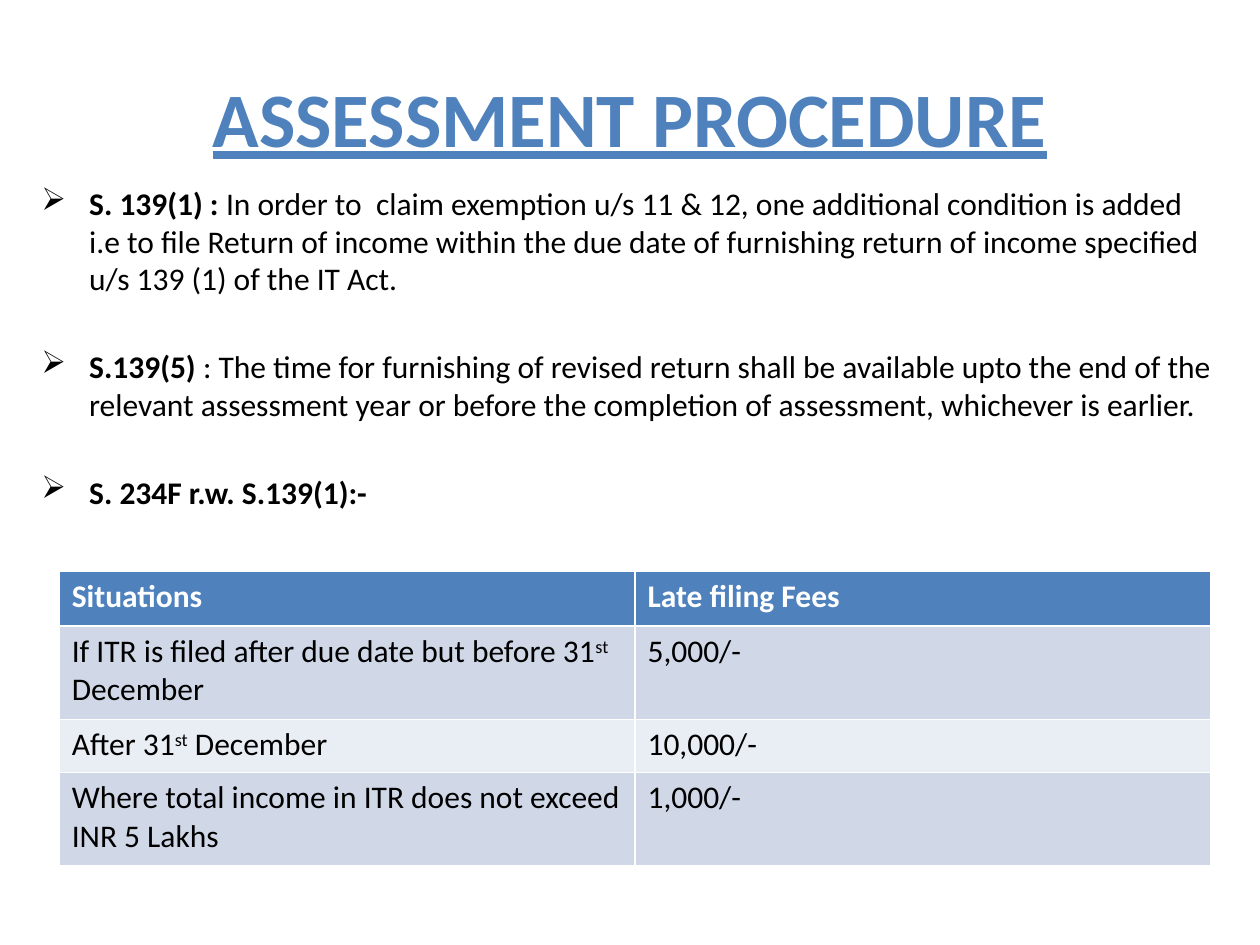
from dataclasses import dataclass

from lxml.etree import SubElement
from pptx import Presentation
from pptx.dml.color import RGBColor as Rgb
from pptx.enum.text import MSO_ANCHOR as Anchor, PP_ALIGN as Align
from pptx.oxml.ns import qn
from pptx.util import Inches, Pt

BLUE, WHITE, BLACK = "4F81BD", "FFFFFF", "000000"
BANDS = ("D0D8E8", "E9EDF4")


@dataclass
class Part:
    text: str
    bold: bool = False
    sup: bool = False


@dataclass
class Row:
    case: list[Part]
    fee: str
    height: float


POINTS = [
    [
        Part("S. 139(1) :", True),
        Part(
            " In order to  claim exemption u/s 11 & 12, one additional condition "
            "is added  i.e to file Return of income within the due date of "
            "furnishing return of income specified u/s 139 (1) of the IT Act."
        ),
    ],
    [
        Part("S.139(5) ", True),
        Part(
            ": The time for furnishing of revised return shall be available upto "
            "the end of the relevant assessment year or before the completion of "
            "assessment, whichever is earlier."
        ),
    ],
    [Part("S. 234F r.w. S.139(1):-", True)],
]

ROWS = [
    Row([Part("Situations")], "Late filing Fees", 0.44),
    Row(
        [
            Part("If ITR is filed after due date but before 31"),
            Part("st", sup=True),
            Part(" December"),
        ],
        "5,000/-",
        0.74,
    ),
    Row([Part("After 31"), Part("st", sup=True), Part(" December")], "10,000/-", 0.42),
    Row([Part("Where total income in ITR does not exceed INR 5 Lakhs")], "1,000/-", 0.74),
]


def paint(item, tone: str) -> None:
    item.rgb = Rgb.from_string(tone)


def write(para, parts: list[Part], tone: str = BLACK, **extra) -> None:
    for part in parts:
        run = para.add_run()
        run.text = part.text
        look = {"name": "Calibri", "size": Pt(18), "bold": part.bold} | extra
        for key, value in look.items():
            setattr(run.font, key, value)
        paint(run.font.color, tone)
        if part.sup:
            run._r.get_or_add_rPr().set("baseline", "30000")


def add_box(slide, left: float, top: float, width: float, height: float):
    box = slide.shapes.add_textbox(*map(Inches, (left, top, width, height)))
    box.text_frame.word_wrap = True
    return box.text_frame


def add_title(slide) -> None:
    frame = add_box(slide, 0.5, 0.3, 9, 1.25)
    frame.vertical_anchor = Anchor.MIDDLE
    para = frame.paragraphs[0]
    para.alignment = Align.CENTER
    write(para, [Part("ASSESSMENT PROCEDURE", True)], BLUE, size=Pt(44), underline=True)


def add_points(slide) -> None:
    frame = add_box(slide, 0.23, 1.41, 9.53, 5.78)
    for i, parts in enumerate(POINTS):
        para = frame.add_paragraph() if i else frame.paragraphs[0]
        if i:
            para.space_before = Pt(28.5)
        props = para._p.get_or_add_pPr()
        props.set("marL", str(Inches(0.38)))
        props.set("indent", str(Inches(-0.38)))
        SubElement(props, qn("a:buChar")).set("char", "➢")
        write(para, parts)


def add_fees(slide) -> None:
    height = sum(row.height for row in ROWS)
    place = map(Inches, (0.47, 4.53, 9.14, height))
    table = slide.shapes.add_table(len(ROWS), 2, *place).table
    for i, row in enumerate(ROWS):
        table.rows[i].height = Inches(row.height)
        head = i == 0
        fill = BLUE if head else BANDS[(i - 1) % 2]
        for j, parts in enumerate((row.case, [Part(row.fee)])):
            cell = table.cell(i, j)
            cell.fill.solid()
            paint(cell.fill.fore_color, fill)
            write(cell.text_frame.paragraphs[0], parts, WHITE if head else BLACK, bold=head)


def main() -> None:
    deck = Presentation()
    deck.slide_width, deck.slide_height = Inches(10), Inches(7.5)
    slide = deck.slides.add_slide(deck.slide_layouts[6])
    add_title(slide)
    add_points(slide)
    add_fees(slide)
    deck.save("out.pptx")


if __name__ == "__main__":
    main()
